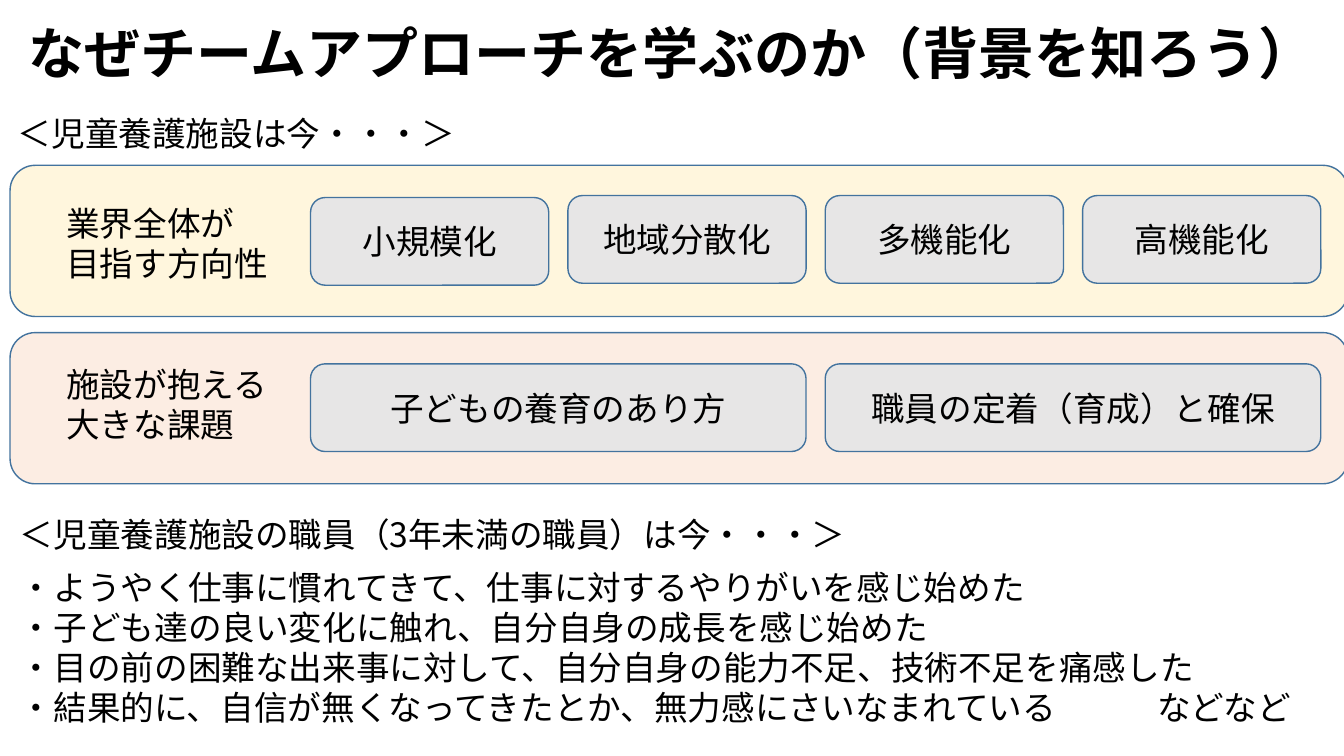
from pptx import Presentation
from pptx.dml.color import RGBColor
from pptx.enum.shapes import MSO_SHAPE
from pptx.enum.text import MSO_ANCHOR, PP_ALIGN
from pptx.oxml.ns import qn
from pptx.util import Inches, Pt
from lxml import etree

TITLE = "なぜチームアプローチを学ぶのか（背景を知ろう）"
FACILITY_HEADING = "＜児童養護施設は今・・・＞"
STAFF_HEADING = "＜児童養護施設の職員（3年未満の職員）は今・・・＞"
STAFF_POINTS = [
    "・ようやく仕事に慣れてきて、仕事に対するやりがいを感じ始めた",
    "・子ども達の良い変化に触れ、自分自身の成長を感じ始めた",
    "・目の前の困難な出来事に対して、自分自身の能力不足、技術不足を痛感した",
    "・結果的に、自信が無くなってきたとか、無力感にさいなまれている\tなどなど",
]

FONT = "Noto Sans CJK JP"
BLACK = RGBColor(0x00, 0x00, 0x00)
BLUE = RGBColor(0x43, 0x73, 0x9E)
GREY = RGBColor(0xE7, 0xE6, 0xE6)
YELLOW = RGBColor(0xFF, 0xD9, 0x66)
ORANGE = RGBColor(0xF4, 0xB1, 0x83)
ROUNDED = MSO_SHAPE.ROUNDED_RECTANGLE
CENTER = PP_ALIGN.CENTER
MIDDLE = MSO_ANCHOR.MIDDLE

# band top, band colour, label top, label lines, box top, box texts
BANDS = [
    (1.64, YELLOW, 1.96, ["業界全体が", "目指す方向性"],
     1.94, ["小規模化", "地域分散化", "多機能化", "高機能化"]),
    (3.3, ORANGE, 3.56, ["施設が抱える", "大きな課題"],
     3.61, ["子どもの養育のあり方", "職員の定着（育成）と確保"]),
]
BOX_LEFT, BOX_RIGHT, BOX_GAP, BOX_HEIGHT = 3.08, 13.1, 0.19, 0.87
FIRST_BOX_DROP = 0.02  # 小規模化 sits slightly below its row
TAB_POSITION = 11.28


def write(shape, lines, size=24, bold=False, align=None):
    tf = shape.text_frame
    tf.word_wrap = True
    tf.text = "\n".join(lines)
    for p in tf.paragraphs:
        p.alignment = align
        font = p.font
        font.name, font.size, font.bold = FONT, Pt(size), bold
        font.color.rgb = BLACK
        for r in p.runs:
            r.font.name, r.font.size, r.font.bold = FONT, Pt(size), bold
            r.font.color.rgb = BLACK
            # East Asian text takes its typeface from a:ea
            ea = etree.SubElement(r.font._element, qn("a:ea"))
            ea.set("typeface", FONT)
    return tf


def add_text(s, left, top, width, height, lines):
    tb = s.shapes.add_textbox(*map(Inches, (left, top, width, height)))
    return write(tb, lines)


def add_rounded(s, left, top, width, height, color, opacity=None):
    sp = s.shapes.add_shape(ROUNDED, *map(Inches, (left, top, width, height)))
    sp.shadow.inherit = False
    sp.fill.solid()
    sp.fill.fore_color.rgb = color
    sp.line.color.rgb = BLUE
    sp.line.width = Pt(1)
    if opacity is not None:
        srgb = sp._element.spPr.find(qn("a:solidFill")).find(qn("a:srgbClr"))
        etree.SubElement(srgb, qn("a:alpha")).set("val", str(opacity * 1000))
    return sp


def add_band(s, top, color, label_top, label, box_top, texts):
    add_rounded(s, 0.1, top, 13.27, 1.5, color, opacity=22)
    add_text(s, 0.56, label_top, 3.43, 0.91, label)
    pitch = (BOX_RIGHT - BOX_LEFT + BOX_GAP) / len(texts)
    for i, text in enumerate(texts):
        drop = FIRST_BOX_DROP if text == "小規模化" else 0
        box = add_rounded(s, BOX_LEFT + i * pitch, box_top + drop,
                          pitch - BOX_GAP, BOX_HEIGHT, GREY)
        write(box, [text], align=CENTER).vertical_anchor = MIDDLE


def add_tab_stop(p, position):
    pPr = p._p.get_or_add_pPr()
    tabs = etree.Element(qn("a:tabLst"))
    tab = etree.SubElement(tabs, qn("a:tab"))
    tab.set("pos", str(Inches(position)))
    tab.set("algn", "l")
    pPr.find(qn("a:defRPr")).addprevious(tabs)


def main():
    prs = Presentation()
    prs.slide_width, prs.slide_height = Inches(13.33), Inches(7.5)
    s = prs.slides.add_slide(prs.slide_layouts[5])

    title = s.shapes.title
    title.left, title.top = Inches(-0.01), Inches(0.02)
    title.width, title.height = Inches(13.34), Inches(1.08)
    tf = write(title, [TITLE], size=40, bold=True, align=CENTER)
    tf.vertical_anchor = MIDDLE
    tf.paragraphs[0].line_spacing = 0.9

    add_text(s, 0.08, 1.07, 12.84, 0.5, [FACILITY_HEADING])
    for band in BANDS:
        add_band(s, *band)
    add_text(s, 0.1, 5.05, 12.84, 0.5, [STAFF_HEADING])
    points = add_text(s, 0.1, 5.57, 12.84, 1.72, STAFF_POINTS)
    add_tab_stop(points.paragraphs[-1], TAB_POSITION)

    prs.save("out.pptx")


if __name__ == "__main__":
    main()
